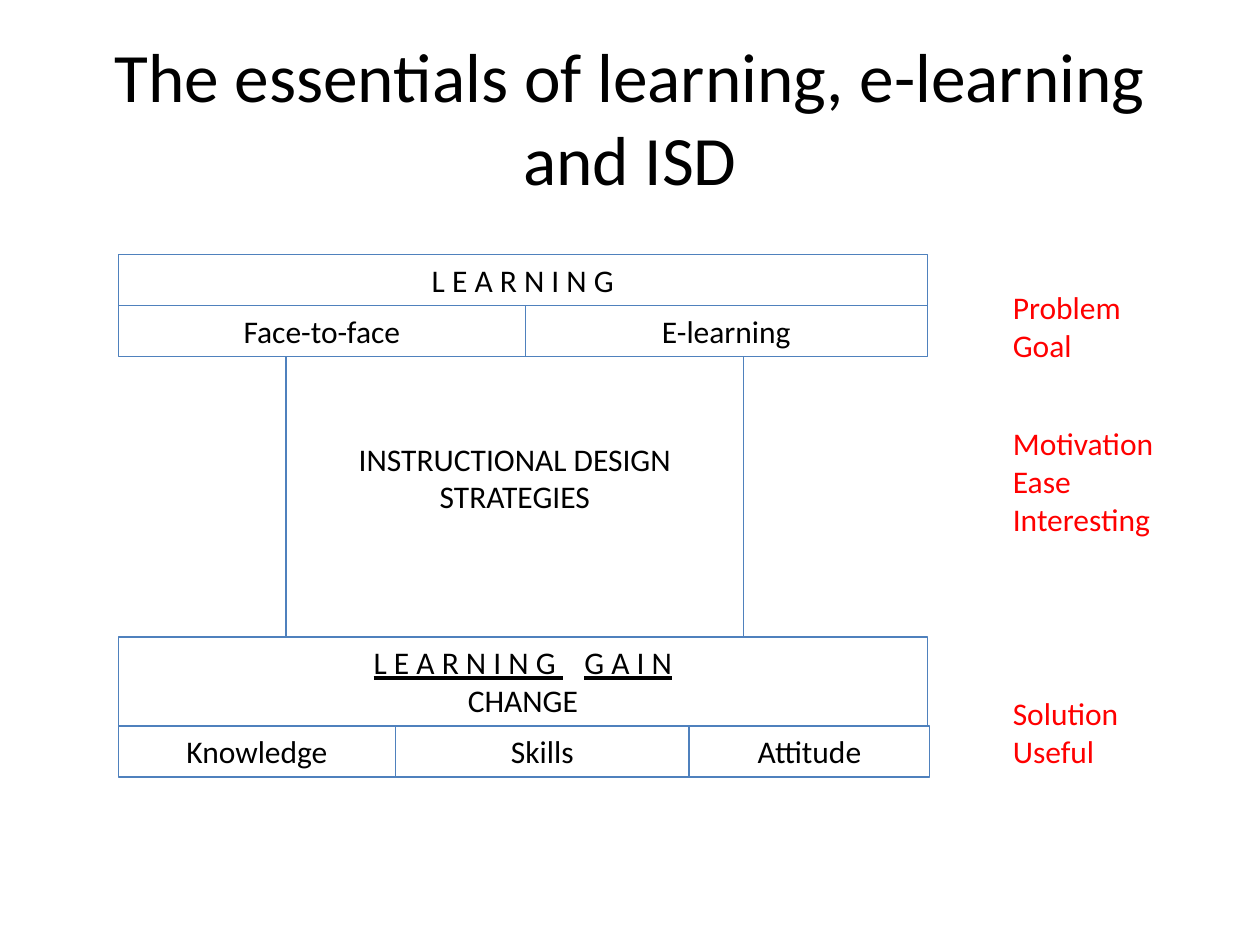
from dataclasses import dataclass

from pptx import Presentation
from pptx.dml.color import RGBColor
from pptx.enum.shapes import MSO_SHAPE
from pptx.enum.text import MSO_ANCHOR, PP_ALIGN
from pptx.util import Pt


@dataclass(frozen=True)
class Theme:
    font: str = "Calibri"
    ink: RGBColor = RGBColor(0, 0, 0)
    accent: RGBColor = RGBColor(255, 0, 0)
    border: RGBColor = RGBColor(0x4F, 0x81, 0xBD)
    title_size: float = 39.6
    body_size: float = 18
    border_width: float = 0.75


THEME = Theme()
TITLE = "The essentials of learning, e-learning and ISD"
DIAGRAM_LEFT, DIAGRAM_TOP = 67.7, 145.4
ROW_HEIGHT = 29.1
STRATEGY_INSET = 47.6
DEFAULT_INSET = 3.6
WORD_GAP = 12.2

ROWS = [
    (0, ROW_HEIGHT, DEFAULT_INSET, [("L E A R N I N G", 462.2)]),
    (0, ROW_HEIGHT, DEFAULT_INSET, [("Face-to-face", 232.5), ("E-learning", 229.7)]),
    (95.8, 160.4, STRATEGY_INSET, [("INSTRUCTIONAL DESIGN STRATEGIES", 261.4)]),
    (0, 50.9, DEFAULT_INSET, [("", 462.2)]),
    (0, ROW_HEIGHT, DEFAULT_INSET,
     [("Knowledge", 158.4), ("Skills", 167.7), ("Attitude", 137.5)]),
]
GAIN_WORDS = ["L E A R N I N G", " ", "G A I N"]
GAIN_RESULT = "CHANGE"
NOTES = [
    (161.3, 109.4, ["Problem", "Goal"]),
    (239, 109.4, ["Motivation", "Ease", "Interesting"]),
    (393.1, 118.1, ["Solution", "Useful"]),
]
NOTE_LEFT = 571.7
NOTE_LINE = 21.8


def style_text(box, size, color, align):
    box.text_frame.word_wrap = True
    for para in box.text_frame.paragraphs:
        para.alignment = align
        for span in para.runs:
            span.font.name = THEME.font
            span.font.size = Pt(size)
            span.font.color.rgb = color


def add_text(page, left, top, width, height, text, size, color, align):
    box = page.shapes.add_textbox(Pt(left), Pt(top), Pt(width), Pt(height))
    box.text_frame.text = text
    style_text(box, size, color, align)
    return box


def add_block(page, left, top, width, height, inset, text):
    block = page.shapes.add_shape(
        MSO_SHAPE.RECTANGLE, Pt(left), Pt(top), Pt(width), Pt(height))
    block.shadow.inherit = False
    block.fill.background()
    block.line.color.rgb = THEME.border
    block.line.width = Pt(THEME.border_width)
    frame = block.text_frame
    frame.vertical_anchor = MSO_ANCHOR.TOP
    frame.margin_top = Pt(inset)
    if text:
        frame.text = text
    else:
        fill_gain(frame)
    style_text(block, THEME.body_size, THEME.ink, PP_ALIGN.CENTER)


def fill_gain(frame):
    for word in GAIN_WORDS:
        span = frame.paragraphs[0].add_run()
        span.text = word
        span.font.underline = True
        if word == " ":
            span._r.get_or_add_rPr().set("spc", str(round(WORD_GAP * 100)))
    frame.add_paragraph().text = GAIN_RESULT


def main():
    deck = Presentation()
    deck.slide_width, deck.slide_height = Pt(720), Pt(540)
    page = deck.slides.add_slide(deck.slide_layouts[6])

    top = DIAGRAM_TOP
    for indent, height, inset, blocks in ROWS:
        left = DIAGRAM_LEFT + indent
        for text, width in blocks:
            add_block(page, left, top, width, height, inset, text)
            left += width
        top += height

    for note_top, width, lines in NOTES:
        height = 2 * DEFAULT_INSET + NOTE_LINE * len(lines)
        add_text(page, NOTE_LEFT, note_top, width, height, "\n".join(lines),
                 THEME.body_size, THEME.accent, PP_ALIGN.LEFT)

    title = add_text(page, 36, 21.6, 648, 90, TITLE,
                     THEME.title_size, THEME.ink, PP_ALIGN.CENTER)
    title.text_frame.vertical_anchor = MSO_ANCHOR.MIDDLE
    deck.save("out.pptx")


if __name__ == "__main__":
    main()
